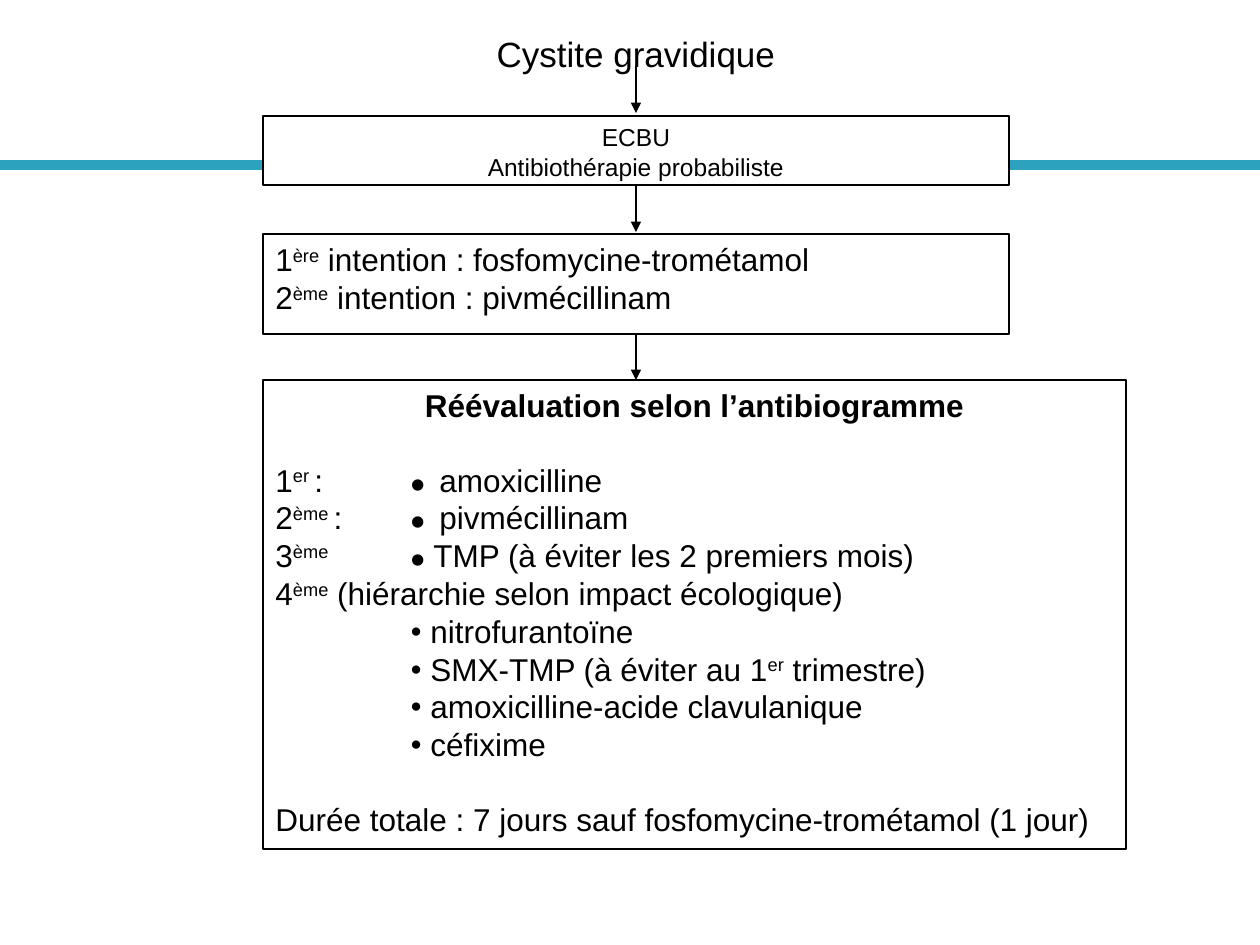
from lxml import etree
from pptx import Presentation
from pptx.dml.color import RGBColor
from pptx.enum.shapes import MSO_CONNECTOR, MSO_SHAPE
from pptx.enum.text import MSO_ANCHOR, PP_ALIGN
from pptx.oxml.ns import qn
from pptx.util import Pt

PX = 914400 // 126
STRAIGHT = MSO_CONNECTOR.STRAIGHT
RECTANGLE = MSO_SHAPE.RECTANGLE
TOP = MSO_ANCHOR.TOP
LEFT, CENTER, JUSTIFY = PP_ALIGN.LEFT, PP_ALIGN.CENTER, PP_ALIGN.JUSTIFY
BLACK = RGBColor(0x00, 0x00, 0x00)
WHITE = RGBColor(0xFF, 0xFF, 0xFF)
TEAL = RGBColor(0x2D, 0xA2, 0xBF)
BOTTOM_SIDE = 2
BULLET_STOP, NAME_STOP = 135, 164
HANGING = 20


def add_rule(page, start, end, color, weight, arrow=False):
    rule = page.shapes.add_connector(STRAIGHT, *(PX * n for n in start + end))
    rule.line.color.rgb = color
    rule.line.width = Pt(weight)
    if arrow:
        outline = rule.line._get_or_add_ln()
        etree.SubElement(outline, qn("a:tailEnd"), type="triangle")
    etree.SubElement(rule._element.spPr, qn("a:effectLst"))
    return rule


def add_arrow_below(page, shape, tip):
    middle = (shape.left + shape.width // 2) // PX
    bottom = (shape.top + shape.height) // PX
    arrow = add_rule(page, (middle, bottom), (middle, tip), BLACK, 0.75, arrow=True)
    arrow.begin_connect(shape, BOTTOM_SIDE)


def add_box(page, box, outlined=True):
    shape = page.shapes.add_shape(RECTANGLE, *(PX * n for n in box))
    shape.shadow.inherit = False
    shape.fill.solid()
    shape.fill.fore_color.rgb = WHITE
    if outlined:
        shape.line.color.rgb = BLACK
        shape.line.width = Pt(0.75)
    else:
        shape.line.fill.background()
    shape.text_frame.word_wrap = True
    shape.text_frame.vertical_anchor = TOP
    return shape


def add_para(frame, size, align, before=0, bold=False):
    para = frame.paragraphs[0]
    if para.runs:
        para = frame.add_paragraph()
    para.alignment = align
    para.space_before = Pt(before)
    para.font.name = "Arial"
    para.font.size = Pt(size)
    para.font.bold = bold
    para.font.color.rgb = BLACK
    return para


def add_span(para, text, raised=False):
    span = para.add_run()
    span.text = text
    if raised:
        span._r.get_or_add_rPr().set("baseline", "30000")
    return span


def add_ranked(para, before, suffix, after):
    add_span(para, before)
    add_span(para, suffix, raised=True)
    add_span(para, after)


def set_stops(para):
    props = para._p.get_or_add_pPr()
    stops = etree.Element(qn("a:tabLst"))
    for stop in (BULLET_STOP, NAME_STOP):
        etree.SubElement(stops, qn("a:tab"), pos=str(stop * PX), algn="l")
    props.find(qn("a:defRPr")).addprevious(stops)


def set_bullet(para):
    props = para._p.get_or_add_pPr()
    props.set("marL", str((BULLET_STOP + HANGING) * PX))
    props.set("indent", str(-HANGING * PX))
    defaults = props.find(qn("a:defRPr"))
    for tag, attributes in (
        ("a:buSzPct", {"val": "61000"}),
        ("a:buFont", {"typeface": "Arial"}),
        ("a:buChar", {"char": "●"}),
    ):
        defaults.addprevious(etree.Element(qn(tag), attributes))


def add_title(page, box):
    shape = add_box(page, box, outlined=False)
    add_span(add_para(shape.text_frame, 20, CENTER), "Cystite gravidique")
    return shape


def add_first_step(page, box):
    shape = add_box(page, box)
    for text in ("ECBU", "Antibiothérapie probabiliste"):
        add_span(add_para(shape.text_frame, 14, CENTER), text)
    return shape


def add_intentions(page, box):
    shape = add_box(page, box)
    for rank, suffix, drug, before in (
        ("1", "ère", "fosfomycine-trométamol", 6),
        ("2", "ème", "pivmécillinam", 0),
    ):
        para = add_para(shape.text_frame, 18, LEFT, before)
        add_ranked(para, rank, suffix, f" intention : {drug}")
    return shape


def add_reassessment(page, box):
    frame = add_box(page, box).text_frame
    add_span(add_para(frame, 18, CENTER, bold=True), "Réévaluation selon l’antibiogramme")

    for rank, suffix, lead, name, before in (
        ("1", "er ", ":\t", "\tamoxicilline", 21),
        ("2", "ème ", ":\t", "\tpivmécillinam", 0),
        ("3", "ème", "\t", " TMP (à éviter les 2 premiers mois)", 0),
    ):
        para = add_para(frame, 18, JUSTIFY, before)
        set_stops(para)
        add_ranked(para, rank, suffix, lead)
        dot = add_span(para, "●")
        dot.font.name = "Calibri"
        dot.font.size = Pt(14)
        add_span(para, name)

    para = add_para(frame, 18, JUSTIFY)
    add_ranked(para, "4", "ème", " (hiérarchie selon impact écologique)")

    for parts in (
        ("nitrofurantoïne",),
        ("SMX-TMP (à éviter au 1", "er", " trimestre)"),
        ("amoxicilline-acide clavulanique",),
        ("céfixime",),
    ):
        para = add_para(frame, 18, JUSTIFY)
        set_bullet(para)
        for index, text in enumerate(parts):
            add_span(para, text, raised=index == 1)

    para = add_para(frame, 18, JUSTIFY, before=21)
    add_span(para, "Durée totale : 7 jours sauf fosfomycine-trométamol (1 jour)")


def main():
    deck = Presentation()
    deck.slide_width, deck.slide_height = 1260 * PX, 945 * PX
    page = deck.slides.add_slide(deck.slide_layouts[6])

    add_rule(page, (0, 165), (1260, 165), TEAL, 6)
    first_step = add_first_step(page, (263, 116, 746, 69))
    intentions = add_intentions(page, (263, 234, 746, 100))
    add_reassessment(page, (263, 380, 863, 469))
    title = add_title(page, (363, 26, 546, 40))
    for shape, tip in ((title, 113), (first_step, 232), (intentions, 380)):
        add_arrow_below(page, shape, tip)

    deck.save("out.pptx")


if __name__ == "__main__":
    main()
